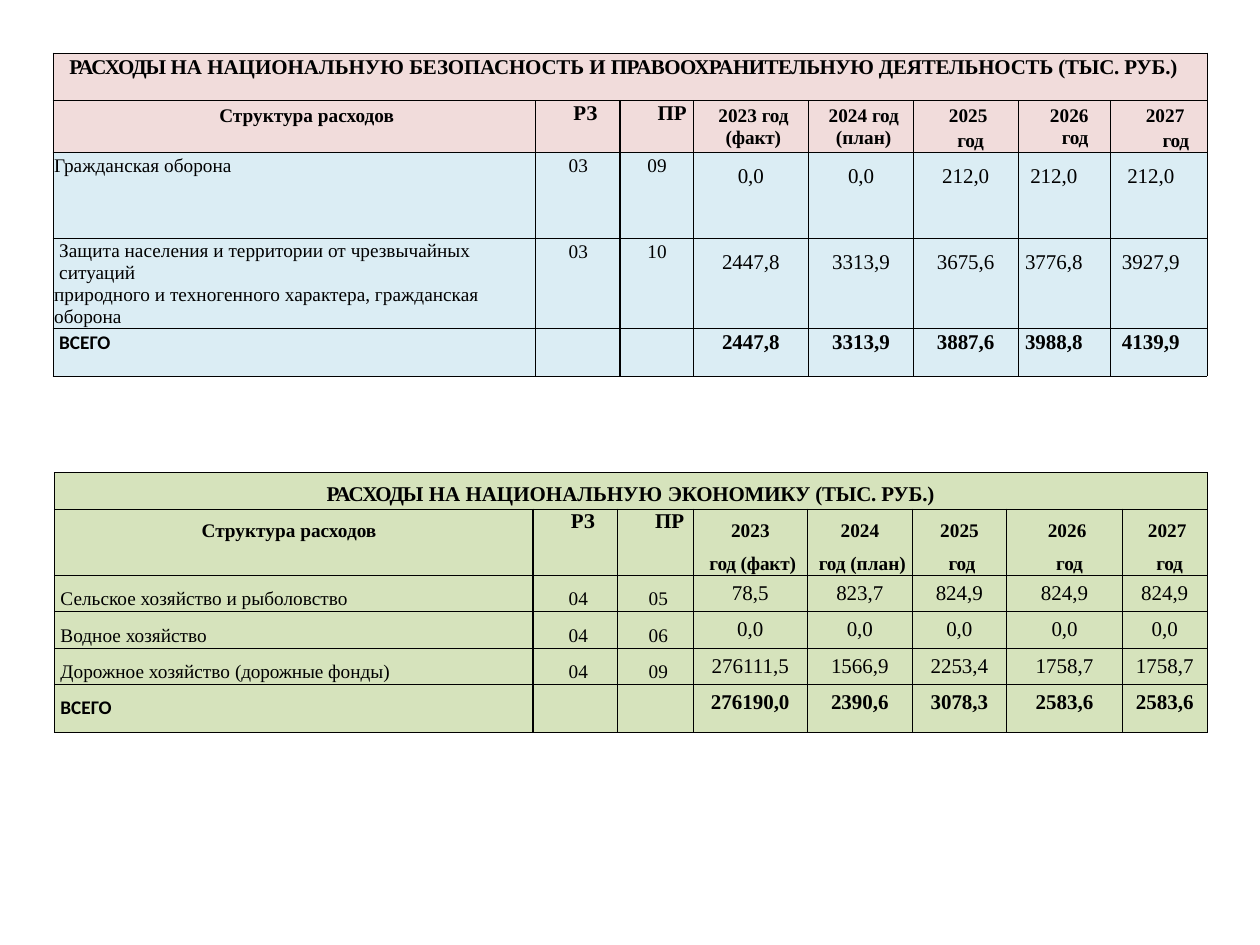
import dataclasses
import lxml.etree
import pptx
import pptx.dml.color
import pptx.enum.text
import pptx.oxml.ns
import pptx.util
from pptx.util import Inches, Pt

ALIGN = pptx.enum.text.PP_ALIGN
qn = pptx.oxml.ns.qn


def color(value):
    return pptx.dml.color.RGBColor.from_string(value)


@dataclasses.dataclass
class Style:
    top: float = 0.02
    align: object = ALIGN.CENTER
    left: float = 0
    right: float = 0
    line: float = None
    before: float = 0
    size: float = 11
    bold: bool = False
    font: str = "Times New Roman"

    def but(self, **changes):
        return dataclasses.replace(self, **changes)


class Deck:
    ink = "000000"

    def __init__(self):
        self.prs = pptx.Presentation()
        self.prs.slide_width, self.prs.slide_height = Inches(10), Inches(7.5)
        self.s = self.prs.slides.add_slide(self.prs.slide_layouts[6])

    def table(self, left, top, cols, heights, rows, fills):
        frame = self.s.shapes.add_table(
            len(heights), len(cols), Inches(left), Inches(top),
            Inches(sum(cols)), Inches(sum(heights)))
        tbl = frame.table
        tbl.first_row = tbl.horz_banding = False
        for column, width in zip(tbl.columns, cols):
            column.width = Inches(width)
        for row, height in zip(tbl.rows, heights):
            row.height = Inches(height)
        for i, (row, fill) in enumerate(zip(rows, fills)):
            for j in range(len(cols)):
                cell = tbl.cell(i, j)
                style, paragraphs = row[j] if j < len(row) else (Style(), [])
                self.text(cell, style, paragraphs)
                self.borders(cell, i, j)
                cell.fill.solid()
                cell.fill.fore_color.rgb = color(fill)
        tbl.cell(0, 0).merge(tbl.cell(0, len(cols) - 1))

    def borders(self, cell, i, j):
        widths = {
            "a:lnL": 1 if i and j in (1, 2) else 0.5,
            "a:lnR": 1 if i and j in (0, 1) else 0.5,
            "a:lnT": 0.5,
            "a:lnB": 0.5,
        }
        tcPr = cell._tc.get_or_add_tcPr()
        for tag, width in widths.items():
            ln = lxml.etree.SubElement(tcPr, qn(tag), w=str(Pt(width)))
            fill = lxml.etree.SubElement(ln, qn("a:solidFill"))
            lxml.etree.SubElement(fill, qn("a:srgbClr"), val=self.ink)

    def text(self, cell, style, paragraphs):
        cell.margin_left = cell.margin_right = cell.margin_bottom = 0
        cell.margin_top = Inches(style.top)
        tf = cell.text_frame
        if not paragraphs:
            lxml.etree.SubElement(tf.paragraphs[0]._p, qn("a:endParaRPr"), sz="1100")
        for n, item in enumerate(paragraphs):
            p = tf.add_paragraph() if n else tf.paragraphs[0]
            look, runs = item if isinstance(item, tuple) else (style, item)
            self.paragraph(p, look, runs, n > 0)

    def paragraph(self, p, style, runs, spaced):
        p.alignment = style.align
        pPr = p._p.get_or_add_pPr()
        pPr.set("marL", str(Inches(style.left)))
        pPr.set("marR", str(Inches(style.right)))
        pPr.set("indent", "0")
        if style.line:
            p.line_spacing = Pt(style.line)
        if spaced:
            p.space_before = Pt(style.before)
        for text, spacing in runs:
            r = p.add_run()
            r.text = text
            r.font.name, r.font.size = style.font, Pt(style.size)
            r.font.bold = style.bold
            r.font.color.rgb = color(self.ink)
            if spacing:
                r._r.get_or_add_rPr().set("spc", str(round(spacing * 100)))


def plain(text):
    return [[(text, 0)]]


def numbers(style, values, rights=(0,) * 5):
    return [(style.but(right=right), plain(v)) for v, right in zip(values.split(), rights)]


def row(name, label, code_style, codes, value_style, values, rights=(0,) * 5):
    return ([(name, label)] + [(code_style, plain(c)) for c in codes]
            + numbers(value_style, values, rights))


def build():
    deck = Deck()
    year = [("год", -0.1)]
    spaced_year = [(" ", -0.6), ("год", -0.1)]
    no_codes = ("", "")
    total = Style(left=0.05, line=12.8, bold=True, font="Calibri", align=ALIGN.LEFT)
    section = Style(top=0.01, align=ALIGN.LEFT, left=0.3, size=12, bold=True)
    sections = [(section, plain("РЗ")), (section, plain("ПР"))]

    title = Style(align=ALIGN.LEFT, left=0.13, line=13.7, size=12, bold=True)
    head = Style(top=0.03, left=0.04, line=12.5, before=2.2, bold=True)
    right_head = head.but(align=ALIGN.RIGHT, left=0.1, right=0.17)
    code = Style(left=0.01, line=12.8)
    name = code.but(align=ALIGN.LEFT)
    value = Style(top=0.1, size=12)
    sums = Style(top=0.01, line=14, size=12, bold=True)
    rights = (0, 0, 0, 0.16, 0.12)
    protection = [
        (name.but(left=0.05, line=None),
         [("Защита населения и территории от чрезвычайных ситуаций", 0)]),
        [("природного и техногенного характера, гражданская оборона", 0)],
    ]
    deck.table(
        0.42, 0.42, [3.83, 0.67, 0.58, 0.92, 0.83, 0.83, 0.73, 0.77],
        [0.38, 0.38, 0.68, 0.68, 0.38],
        [
            [(title, [[("РАСХОДЫ ", -0.6), ("НА НАЦИОНАЛЬНУЮ", 0), (" БЕЗОПАСНОСТЬ ", -0.1),
                       ("И ", 0), ("ПРАВООХРАНИТЕЛЬНУЮ ", -0.3),
                       ("ДЕЯТЕЛЬНОСТЬ (ТЫС. РУБ.)", -0.1)]])],
            [(head.but(align=ALIGN.LEFT, left=1.32), plain("Структура расходов")), *sections,
             (head, [[("2023 ", 0), ("год (факт)", -0.1)]]),
             (head, [[("2024 ", 0), ("год ", -0.1), ("(план)", 0)]]),
             (head, [[("2025", 0)], spaced_year]),
             (right_head, [[("2026 ", 0)] + year]),
             (right_head.but(right=0.14), [[("2027 ", 0)], year])],
            row(name, plain("Гражданская оборона"), code, ("03", "09"),
                value, "0,0 0,0 212,0 212,0 212,0", rights),
            row(name, protection, code, ("03", "10"),
                value, "2447,8 3313,9 3675,6 3776,8 3927,9", rights),
            row(total.but(top=0.03), plain("ВСЕГО"), code, no_codes,
                sums, "2447,8 3313,9 3887,6 3988,8 4139,9", rights),
        ],
        ["F1DCDB"] * 2 + ["DBEDF4"] * 3)

    title = Style(top=0.08, line=13.7, size=12, bold=True)
    head = Style(top=0.09, left=0.04, before=6.8, bold=True)
    code = Style(top=0.1, left=0.05, line=12.8)
    name = code.but(align=ALIGN.LEFT)
    value = Style(top=0.05, size=12)
    deck.table(
        0.43, 3.75, [3.8, 0.67, 0.6, 0.91, 0.83, 0.75, 0.92, 0.67],
        [0.29, 0.37, 0.29, 0.29, 0.29, 0.29],
        [
            [(title, [[("РАСХОДЫ", -0.6), (" НА НАЦИОНАЛЬНУЮ ", 0),
                       ("ЭКОНОМИКУ (ТЫС. РУБ.)", -0.1)]])],
            [(head.but(align=ALIGN.LEFT, left=1.17), plain("Структура расходов")), *sections,
             (head, [[("2023 ", 0)], [("год (факт)", -0.1)]]),
             (head, [[("2024 ", 0)], [("год ", -0.1), ("(план)", 0)]]),
             (head, [[("2025 ", 0)], year]),
             (head, [[("2026", 0)], spaced_year]),
             (head, [[("2027", 0)], spaced_year])],
            row(name, plain("Сельское хозяйство и рыболовство"), code, ("04", "05"),
                value, "78,5 823,7 824,9 824,9 824,9"),
            row(name, plain("Водное хозяйство"), code, ("04", "06"),
                value, "0,0 0,0 0,0 0,0 0,0"),
            row(name, [[("Дорожное хозяйство ", 0), ("(дорожные ", -0.1), ("фонды)", 0)]],
                code, ("04", "09"), value, "276111,5 1566,9 2253,4 1758,7 1758,7"),
            row(total.but(top=0.1), plain("ВСЕГО"), code, no_codes,
                value.but(bold=True), "276190,0 2390,6 3078,3 2583,6 2583,6"),
        ],
        ["D6E3BC"] * 6)
    deck.prs.save("out.pptx")


if __name__ == "__main__":
    build()
